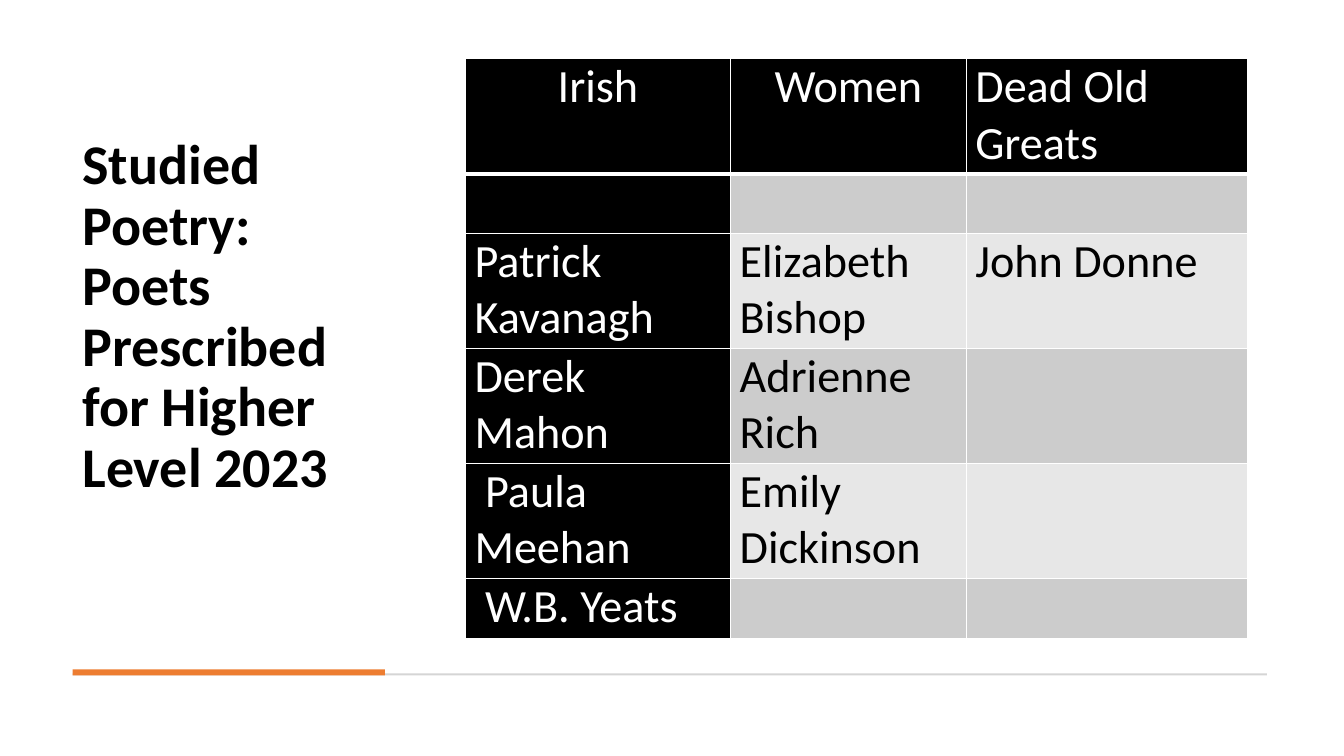
from lxml.etree import SubElement
from pptx import Presentation
from pptx.dml.color import RGBColor
from pptx.enum.shapes import MSO_SHAPE as Shape
from pptx.enum.text import MSO_ANCHOR as Anchor, PP_ALIGN as Align
from pptx.oxml.ns import qn
from pptx.util import Cm, Pt

FONT = "Calibri"
BLACK, WHITE = "000000", "FFFFFF"
GREY, ORANGE = "D5D5D5", "ED7D31"
BANDS = ("CCCCCC", "E7E7E7")

COLUMN_WIDTHS = (6.68, 5.94, 7.09)
TALL_ROW, SHORT_ROW = 2.9, 1.5
ROW_HEIGHTS = (TALL_ROW, SHORT_ROW, TALL_ROW, TALL_ROW, TALL_ROW, SHORT_ROW)
POETS = (
    ("Irish", "Women", "Dead Old Greats"),
    ("", "", ""),
    ("Patrick Kavanagh", "Elizabeth Bishop", "John Donne"),
    ("Derek Mahon", "Adrienne Rich", ""),
    (" Paula Meehan", "Emily Dickinson", ""),
    (" W.B. Yeats", "", ""),
)


def color(value):
    return RGBColor.from_string(value)


def style_paragraph(paragraph, size, text_color, bold=False):
    font = paragraph.font
    font.name, font.size, font.bold = FONT, Pt(size), bold
    font.color.rgb = color(text_color)


def add_title(slide, text):
    box = slide.shapes.add_textbox(Cm(1.83), Cm(1.19), Cm(7.87), Cm(15.16))
    frame = box.text_frame
    frame.word_wrap = True
    frame.vertical_anchor = Anchor.MIDDLE
    frame.margin_bottom = Cm(1.65)  # lifts the title above the middle
    paragraph = frame.paragraphs[0]
    paragraph.text = text
    paragraph.line_spacing = 0.9
    style_paragraph(paragraph, 40, BLACK, bold=True)


def add_bar(slide, top, width, height, fill):
    bar = slide.shapes.add_shape(
        Shape.RECTANGLE, Cm(1.83), Cm(top), Cm(width), Cm(height))
    bar.shadow.inherit = False
    bar.fill.solid()
    bar.fill.fore_color.rgb = color(fill)
    bar.line.fill.background()


def add_borders(cell, bottom_width):
    properties = cell._tc.get_or_add_tcPr()
    for side, width in (("L", 1), ("R", 1), ("T", 1), ("B", bottom_width)):
        line = SubElement(properties, qn(f"a:ln{side}"), w=str(Pt(width)))
        fill = SubElement(line, qn("a:solidFill"))
        SubElement(fill, qn("a:srgbClr"), val=WHITE)


def fill_cell(cell, text, row, column):
    is_header = row == 0
    is_dark = is_header or column == 0
    add_borders(cell, 3 if is_header else 1)
    cell.fill.solid()
    cell.fill.fore_color.rgb = color(BLACK if is_dark else BANDS[(row - 1) % 2])
    cell.margin_left = cell.margin_right = Cm(0.23)
    cell.margin_top = cell.margin_bottom = Cm(0)
    paragraph = cell.text_frame.paragraphs[0]
    paragraph.text = text
    if is_header and column < 2:
        paragraph.alignment = Align.CENTER
    style_paragraph(paragraph, 33, WHITE if is_dark else BLACK)


def add_poets_table(slide):
    frame = slide.shapes.add_table(
        len(POETS), len(COLUMN_WIDTHS), Cm(11.73), Cm(1.48),
        Cm(sum(COLUMN_WIDTHS)), Cm(sum(ROW_HEIGHTS)))
    table = frame.table
    table.first_row = table.horz_banding = False
    for column, width in zip(table.columns, COLUMN_WIDTHS):
        column.width = Cm(width)
    for row, height in zip(table.rows, ROW_HEIGHTS):
        row.height = Cm(height)
    for row, names in enumerate(POETS):
        for column, name in enumerate(names):
            fill_cell(table.cell(row, column), name, row, column)


def main():
    presentation = Presentation()
    presentation.slide_width, presentation.slide_height = Cm(33.87), Cm(19.05)
    slide = presentation.slides.add_slide(presentation.slide_layouts[6])

    # Title on the left
    add_title(slide, "Studied Poetry: Poets Prescribed for Higher Level 2023")

    # Rule along the bottom with its accent
    add_bar(slide, 16.97, 30.1, 0.05, GREY)
    add_bar(slide, 16.87, 7.87, 0.15, ORANGE)

    # Poets by group
    add_poets_table(slide)

    presentation.save("out.pptx")


if __name__ == "__main__":
    main()
